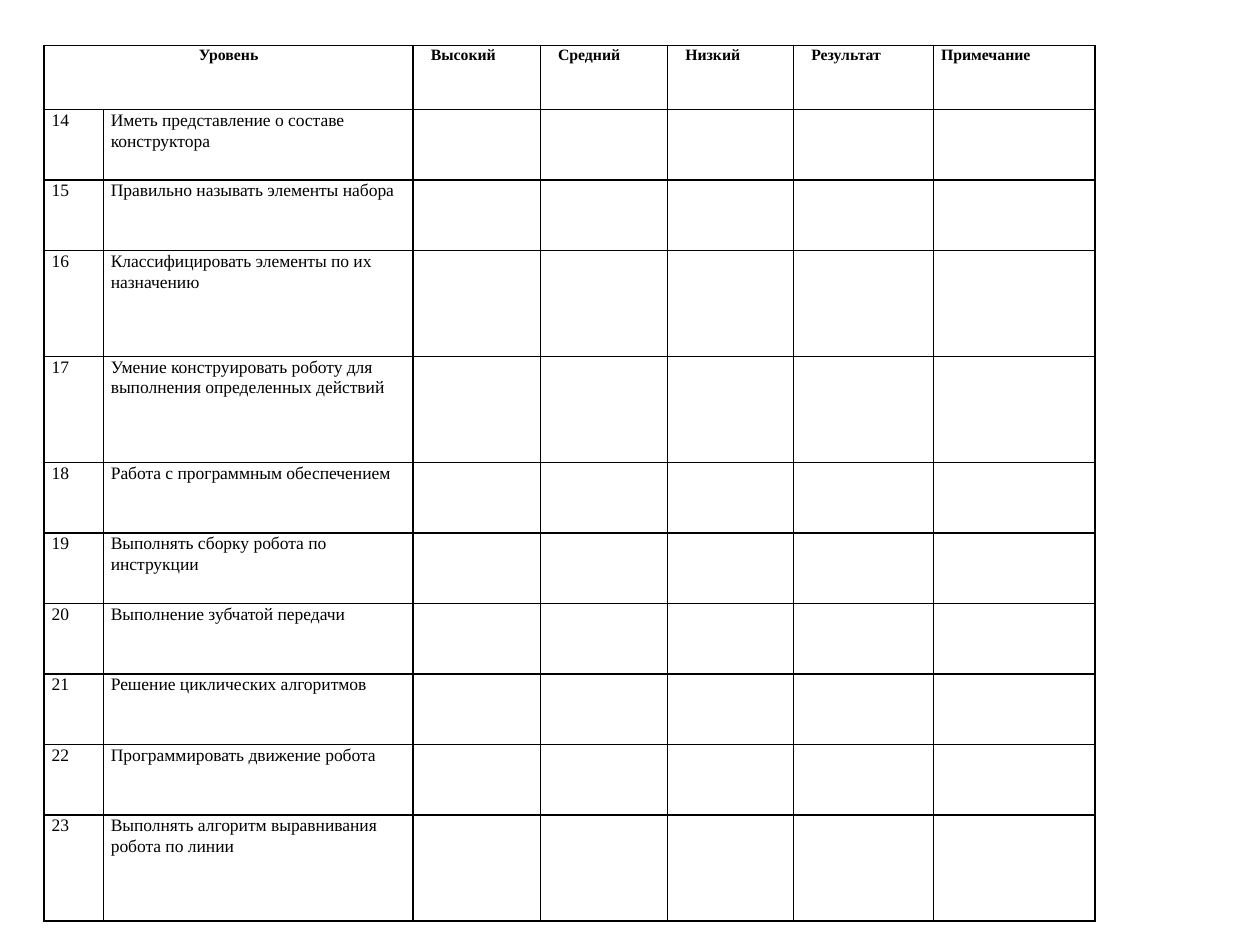
import lxml.etree
import pptx
import pptx.dml.color
import pptx.enum.text
import pptx.oxml.ns
import pptx.util

Inches = pptx.util.Inches
Pt = pptx.util.Pt
ALIGN = pptx.enum.text.PP_ALIGN
BLACK = pptx.dml.color.RGBColor(0x00, 0x00, 0x00)

HEADINGS = ["Высокий", "Средний", "Низкий", "Результат", "Примечание"]
SKILLS = [
    "Иметь представление о составе конструктора",
    "Правильно называть элементы набора",
    "Классифицировать элементы по их назначению",
    "Умение конструировать роботу для выполнения определенных действий",
    "Работа с программным обеспечением",
    "Выполнять сборку робота по инструкции",
    "Выполнение зубчатой передачи",
    "Решение циклических алгоритмов",
    "Программировать движение робота",
    "Выполнять алгоритм выравнивания робота по линии",
]
FIRST_NUMBER = 14
TALL_SKILLS = {16, 17, 23}
COLUMN_WIDTHS = [0.47, 2.46, 1.01, 1.01, 1, 1.11, 1.28]
HEADER_HEIGHT, ROW_HEIGHT, TALL_HEIGHT = 0.51, 0.56, 0.84


class SlideBuilder:
    """Holds the style and the current slide."""

    body_font = {"name": "Times New Roman", "size": Pt(10), "bold": False}
    header_font = {**body_font, "size": Pt(9), "bold": True}
    cell_margins = {"margin_left": Inches(0.06), "margin_right": Inches(0.06),
                    "margin_top": 0, "margin_bottom": 0}
    border_width = Pt(1)

    def __init__(self, slide):
        self.slide = slide

    def add_table(self, left, top, widths, heights):
        shape = self.slide.shapes.add_table(
            len(heights), len(widths), Inches(left), Inches(top),
            Inches(sum(widths)), Inches(sum(heights)))
        table = shape.table
        table.first_row = table.horz_banding = False
        for column, width in zip(table.columns, widths):
            column.width = Inches(width)
        for row, height in zip(table.rows, heights):
            row.height = Inches(height)
        for cell in table.iter_cells():
            self.format_cell(cell)
        return table

    def format_cell(self, cell):
        for name, value in self.cell_margins.items():
            setattr(cell, name, value)
        cell.fill.background()
        properties = cell._tc.get_or_add_tcPr()
        for position, side in enumerate(("lnL", "lnR", "lnT", "lnB")):
            line = lxml.etree.Element(pptx.oxml.ns.qn(f"a:{side}"), w=str(self.border_width))
            fill = lxml.etree.SubElement(line, pptx.oxml.ns.qn("a:solidFill"))
            lxml.etree.SubElement(fill, pptx.oxml.ns.qn("a:srgbClr"), val=str(BLACK))
            properties.insert(position, line)

    def write_cell(self, cell, text, font, alignment=ALIGN.LEFT, indent=0):
        paragraph = cell.text_frame.paragraphs[0]
        paragraph.alignment = alignment
        paragraph.line_spacing = 1.07
        if indent:
            paragraph._p.get_or_add_pPr().set("indent", str(Inches(indent)))
        run = paragraph.add_run()
        run.text = text
        for name, value in font.items():
            setattr(run.font, name, value)
        run.font.color.rgb = BLACK


def main():
    presentation = pptx.Presentation()
    presentation.slide_width = Inches(10)
    presentation.slide_height = Inches(7.5)
    blank_layout = presentation.slide_layouts[6]
    builder = SlideBuilder(presentation.slides.add_slide(blank_layout))

    # Grid
    numbers = range(FIRST_NUMBER, FIRST_NUMBER + len(SKILLS))
    heights = [HEADER_HEIGHT] + [
        TALL_HEIGHT if number in TALL_SKILLS else ROW_HEIGHT for number in numbers]
    table = builder.add_table(0.35, 0.36, COLUMN_WIDTHS, heights)

    # Header row
    table.cell(0, 0).merge(table.cell(0, 1))
    builder.write_cell(table.cell(0, 0), "Уровень", builder.header_font, ALIGN.CENTER)
    for column, heading in enumerate(HEADINGS, start=2):
        indent = 0 if heading == HEADINGS[-1] else 0.08
        builder.write_cell(table.cell(0, column), heading, builder.header_font, indent=indent)

    # Numbered skills
    for row, (number, skill) in enumerate(zip(numbers, SKILLS), start=1):
        builder.write_cell(table.cell(row, 0), str(number), builder.body_font)
        builder.write_cell(table.cell(row, 1), skill, builder.body_font)

    presentation.save("out.pptx")


if __name__ == "__main__":
    main()
